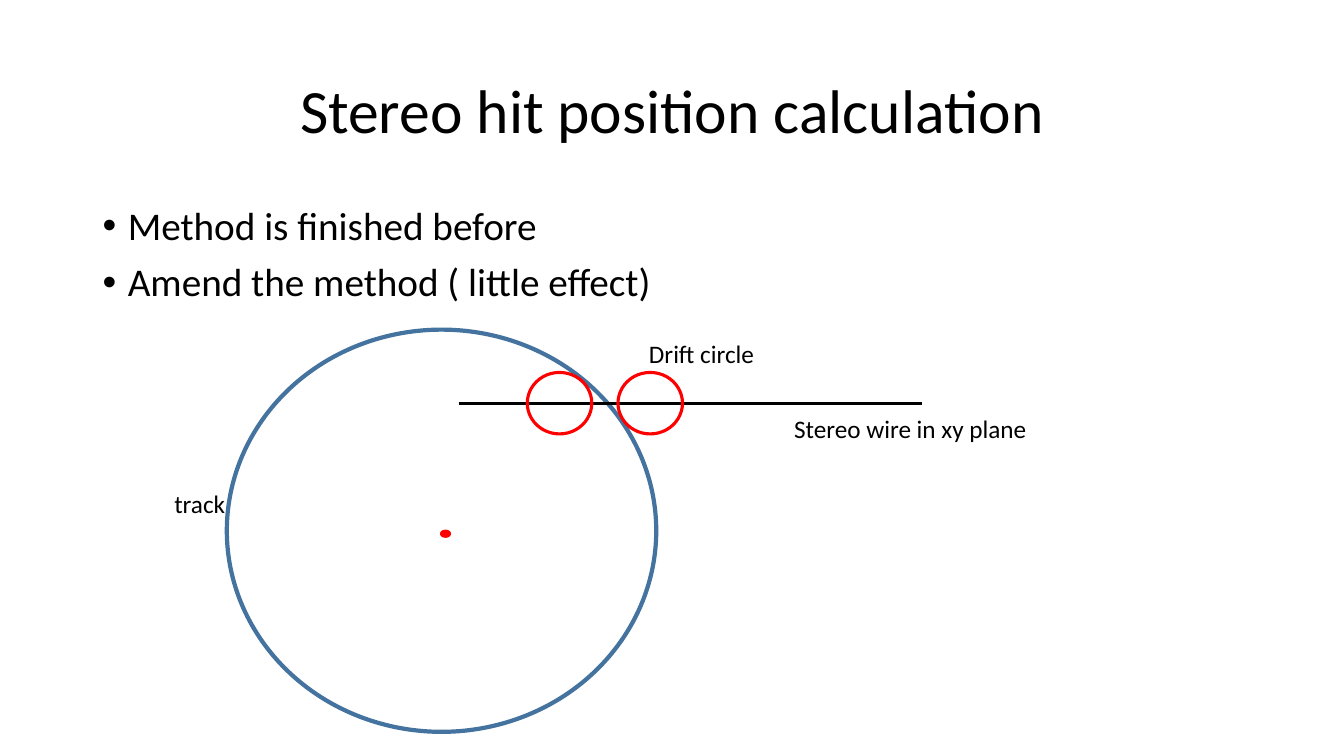
import pptx
import pptx.util
import pptx.dml.color
import pptx.enum.shapes
import pptx.enum.text
import pptx.oxml.ns
import lxml.etree

BLACK = pptx.dml.color.RGBColor(0x00, 0x00, 0x00)
RED = pptx.dml.color.RGBColor(0xFF, 0x00, 0x00)
BLUE = pptx.dml.color.RGBColor(0x43, 0x73, 0x9E)

WIDE, HIGH = pptx.util.Inches(13.33), pptx.util.Inches(7.5)
FONT = "Calibri"
THIN, THICK = 2.25, 3
LEFT, SPAN = 6.9, 86.25
WIRE = 53.33


def sub(node, tag, **attrs):
    return lxml.etree.SubElement(node, pptx.oxml.ns.qn(tag), attrs)


class Page:
    """Draws on one slide; all lengths are percent of its width or height."""

    def __init__(self, slide):
        self.shapes = slide.shapes

    def scale(self, x, y):
        return int(WIDE * x / 100), int(HIGH * y / 100)

    def place(self, box):
        return self.scale(*box[:2]) + self.scale(*box[2:])

    def text(self, box, lines, size, mid=False, wrap=True):
        frame = self.shapes.add_textbox(*self.place(box)).text_frame
        frame.word_wrap = wrap
        if mid:
            frame.vertical_anchor = pptx.enum.text.MSO_ANCHOR.MIDDLE
        for i, line in enumerate(lines):
            para = frame.add_paragraph() if i else frame.paragraphs[0]
            if mid:
                para.alignment = pptx.enum.text.PP_ALIGN.CENTER
            run = para.add_run()
            run.text = line
            run.font.name = FONT
            run.font.size = pptx.util.Pt(size)
            run.font.color.rgb = BLACK
        return frame

    def title(self, box, line):
        frame = self.text(box, [line], 44, mid=True)
        frame.paragraphs[0].line_spacing = 0.9

    def list(self, box, lines):
        for para in self.text(box, lines, 28).paragraphs:
            para.line_spacing = 0.9
            para.space_before = pptx.util.Pt(10)
            props = para._p.get_or_add_pPr()
            dent = pptx.util.Inches(0.25)
            props.set("marL", str(dent))
            props.set("indent", str(-dent))
            sub(props, "a:buFont", typeface="Arial")
            sub(props, "a:buChar", char="•")

    def label(self, x, y, width, line):
        self.text((x, y, width, 5.33), [line], 18)

    def oval(self, box, color, weight, solid=False):
        kind = pptx.enum.shapes.MSO_SHAPE.OVAL
        shape = self.shapes.add_shape(kind, *self.place(box))
        shape.shadow.inherit = False
        if solid:
            shape.fill.solid()
            shape.fill.fore_color.rgb = color
        else:
            shape.fill.background()
        shape.line.color.rgb = color
        shape.line.width = pptx.util.Pt(weight)

    def line(self, start, end, color, weight):
        kind = pptx.enum.shapes.MSO_CONNECTOR.STRAIGHT
        line = self.shapes.add_connector(
            kind, *self.scale(*start), *self.scale(*end))
        line.line.color.rgb = color
        line.line.width = pptx.util.Pt(weight)
        sub(line._element.spPr, "a:effectLst")


def main():
    deck = pptx.Presentation()
    deck.slide_width, deck.slide_height = WIDE, HIGH
    page = Page(deck.slides.add_slide(deck.slide_layouts[6]))

    page.title((LEFT, 5.33, SPAN, 19.33), "Stereo hit position calculation")
    page.list((LEFT, 26.67, SPAN, 63.47),
              ["Method is finished before", "Amend the method ( little effect)"])

    page.oval((16.88, 43.6, 31.95, 53.2), BLUE, THICK)
    page.line((34.13, WIRE), (68.63, WIRE), BLACK, THIN)
    drift = 8.13
    for i in range(2):
        page.oval((39.23 + 6.75 * i, WIRE - drift / 2, 4.8, drift), RED, THIN)

    page.label(12.23, 63.87, 6.9, "track")
    page.label(58.35, 54, 21.6, "Stereo wire in xy plane")
    page.label(47.55, 44.13, 10.2, "Drift circle")
    page.oval((32.85, 70.27, 0.6, 0.67), RED, THIN, solid=True)

    deck.save("out.pptx")


if __name__ == "__main__":
    main()
